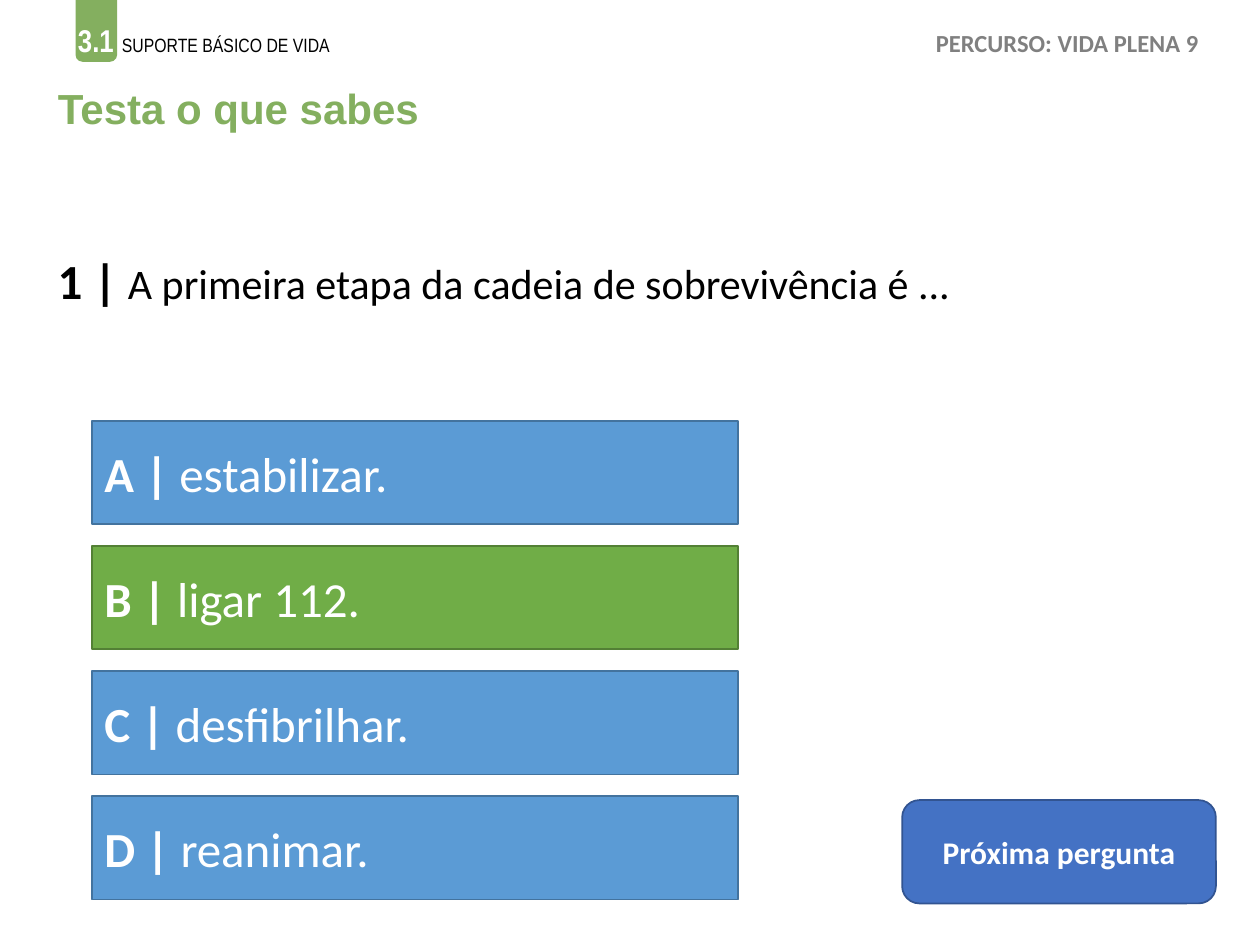
from dataclasses import dataclass

from pptx import Presentation
from pptx.dml.color import RGBColor
from pptx.enum.shapes import MSO_SHAPE
from pptx.enum.text import MSO_ANCHOR, MSO_AUTO_SIZE, PP_ALIGN
from pptx.shapes.autoshape import Shape
from pptx.slide import Slide
from pptx.util import Inches, Pt

WHITE = RGBColor(0xFF, 0xFF, 0xFF)
BLACK = RGBColor(0x00, 0x00, 0x00)
GRAY = RGBColor(0x80, 0x80, 0x80)
LIME = RGBColor(0xAF, 0xC4, 0x39)
CHAPTER_GREEN = RGBColor(0x84, 0xAF, 0x5F)
ANSWER_BLUE = RGBColor(0x5B, 0x9B, 0xD5)
ANSWER_BLUE_LINE = RGBColor(0x43, 0x73, 0x9E)
CORRECT_GREEN = RGBColor(0x70, 0xAD, 0x47)
CORRECT_GREEN_LINE = RGBColor(0x53, 0x80, 0x35)
BUTTON_BLUE = RGBColor(0x44, 0x72, 0xC4)
BUTTON_BLUE_LINE = RGBColor(0x32, 0x54, 0x91)


@dataclass(frozen=True)
class Box:
    left: float
    top: float
    width: float
    height: float

    def lengths(self) -> tuple[Inches, ...]:
        return tuple(Inches(n) for n in (self.left, self.top, self.width, self.height))


@dataclass(frozen=True)
class TextRun:
    text: str
    size: float
    color: RGBColor
    bold: bool = False
    font: str = "Calibri"


@dataclass(frozen=True)
class Answer:
    letter: str
    text: str
    correct: bool = False


ANSWERS = (
    Answer("A", "estabilizar."),
    Answer("B", "ligar 112.", correct=True),
    Answer("C", "desfibrilhar."),
    Answer("D", "reanimar."),
)
FIRST_ANSWER_TOP = 3.34
LAST_ANSWER_TOP = 6.32
ANSWER_PITCH = (LAST_ANSWER_TOP - FIRST_ANSWER_TOP) / (len(ANSWERS) - 1)


def write_runs(shape: Shape, runs: list[TextRun], anchor: MSO_ANCHOR = MSO_ANCHOR.MIDDLE,
               alignment: PP_ALIGN = PP_ALIGN.LEFT) -> None:
    frame = shape.text_frame
    frame.word_wrap = True
    frame.auto_size = MSO_AUTO_SIZE.NONE
    frame.vertical_anchor = anchor
    paragraph = frame.paragraphs[0]
    paragraph.alignment = alignment
    for item in runs:
        run = paragraph.add_run()
        run.text = item.text
        run.font.name = item.font
        run.font.size = Pt(item.size)
        run.font.bold = item.bold
        run.font.color.rgb = item.color


def add_text(slide: Slide, box: Box, runs: list[TextRun],
             alignment: PP_ALIGN = PP_ALIGN.LEFT) -> None:
    textbox = slide.shapes.add_textbox(*box.lengths())
    write_runs(textbox, runs, MSO_ANCHOR.TOP, alignment)


def add_block(slide: Slide, kind: MSO_SHAPE, box: Box, fill: RGBColor,
              line: RGBColor | None = None) -> Shape:
    shape = slide.shapes.add_shape(kind, *box.lengths())
    shape.shadow.inherit = False
    shape.fill.solid()
    shape.fill.fore_color.rgb = fill
    if line is None:
        shape.line.fill.background()
    else:
        shape.line.color.rgb = line
        shape.line.width = Pt(1)
    return shape


def add_header(slide: Slide) -> None:
    add_block(slide, MSO_SHAPE.ROUNDED_RECTANGLE, Box(0.6, -0.13, 0.33, 0.62), CHAPTER_GREEN)
    add_text(slide, Box(0.52, 0.09, 7.15, 0.44), [
        TextRun("3.1", 18, WHITE, True, "Arial Narrow"),
        TextRun(" ", 20, LIME, True, "Arial Narrow"),
        TextRun("SUPORTE BÁSICO DE VIDA", 11, BLACK, False, "Arial Narrow"),
    ])
    add_text(slide, Box(7.18, 0.17, 2.58, 0.34),
             [TextRun("PERCURSO: VIDA PLENA 9", 14, GRAY, True)], PP_ALIGN.CENTER)


def format_title(slide: Slide) -> None:
    title = slide.shapes.title
    title.left, title.top, title.width, title.height = Box(0.36, 0.57, 9.29, 0.62).lengths()
    write_runs(title, [TextRun("Testa o que sabes", 24, CHAPTER_GREEN, True, "Arial")])
    title.text_frame.paragraphs[0].line_spacing = 0.9


def add_answer(slide: Slide, answer: Answer, position: int) -> None:
    fill, line = ((CORRECT_GREEN, CORRECT_GREEN_LINE) if answer.correct
                  else (ANSWER_BLUE, ANSWER_BLUE_LINE))
    box = Box(0.73, FIRST_ANSWER_TOP + position * ANSWER_PITCH, 5.13, 0.82)
    shape = add_block(slide, MSO_SHAPE.RECTANGLE, box, fill, line)
    write_runs(shape, [TextRun(f"{answer.letter} | ", 28, WHITE, True),
                       TextRun(answer.text, 28, WHITE)])


def add_next_button(slide: Slide) -> None:
    button = add_block(slide, MSO_SHAPE.ROUNDED_RECTANGLE, Box(7.16, 6.35, 2.49, 0.82),
                       BUTTON_BLUE, BUTTON_BLUE_LINE)
    write_runs(button, [TextRun("Próxima pergunta", 18, WHITE, True)],
               alignment=PP_ALIGN.CENTER)


def main() -> None:
    presentation = Presentation()
    presentation.slide_width = Inches(10)
    presentation.slide_height = Inches(7.5)
    slide = presentation.slides.add_slide(presentation.slide_layouts[5])
    add_header(slide)
    format_title(slide)
    add_text(slide, Box(0.36, 1.94, 9.29, 0.57), [
        TextRun("1 | ", 28, BLACK, True),
        TextRun("A primeira etapa da cadeia de sobrevivência é ...", 24, BLACK),
    ])
    for position, answer in enumerate(ANSWERS):
        add_answer(slide, answer, position)
    add_next_button(slide)
    presentation.save("out.pptx")


if __name__ == "__main__":
    main()
